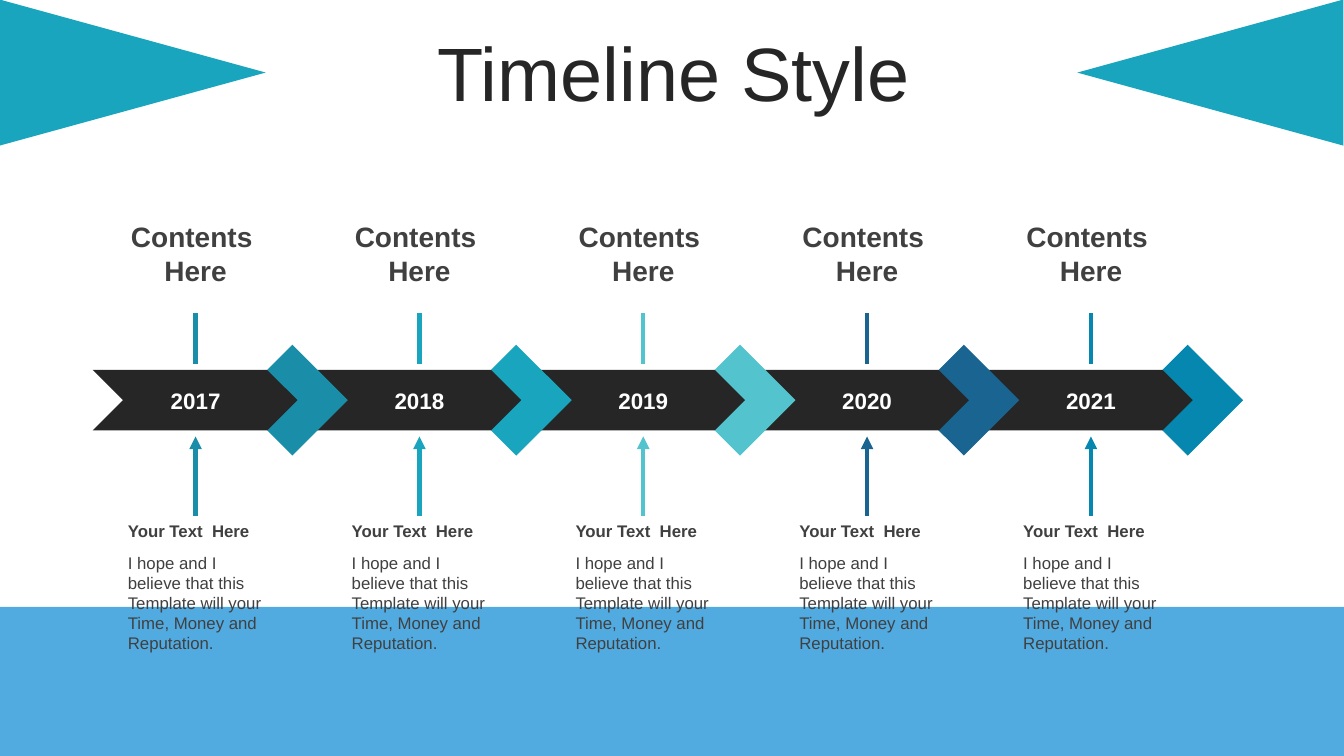
from dataclasses import dataclass

import lxml.etree
import pptx
import pptx.dml.color
import pptx.enum.dml
import pptx.enum.shapes
import pptx.enum.text
import pptx.oxml.ns
import pptx.util

Inches = pptx.util.Inches
Shape = pptx.enum.shapes.MSO_SHAPE
Align = pptx.enum.text.PP_ALIGN
Anchor = pptx.enum.text.MSO_ANCHOR

COLORS = {
    "band": "51ABE1",
    "wedge": "19A5BE",
    "dark": "262626",
    "text": "404040",
    "white": "FFFFFF",
}
FONT = "Arial"
FIRST = 1.94  # centre of the first step
STEP = 2.22
HEAD = "Your Text  Here"
BODY = "I hope and I believe that this Template will your Time, Money and Reputation."


@dataclass
class Stage:
    year: str
    color: str


@dataclass
class Style:
    size: int
    color: str
    bold: bool = False
    align: Align = Align.CENTER


STAGES = [
    Stage("2017", "1A8EA9"),
    Stage("2018", "19A5BE"),
    Stage("2019", "53C3CD"),
    Stage("2020", "196491"),
    Stage("2021", "0587AF"),
]
TITLE = Style(54, COLORS["dark"])
TOPIC = Style(20, COLORS["text"], True)
YEAR = Style(16, COLORS["white"], True)
LABEL = Style(12, COLORS["text"], True, Align.LEFT)
DETAIL = Style(12, COLORS["text"], False, Align.LEFT)


def rgb(color: str) -> pptx.dml.color.RGBColor:
    return pptx.dml.color.RGBColor.from_string(color)


def write(shape, lines: list[str], style: Style) -> None:
    """Fill a shape's text frame, one paragraph per line."""
    frame = shape.text_frame
    frame.word_wrap = True
    frame.text = "\n".join(lines)
    for para in frame.paragraphs:
        para.alignment = style.align
        para.font.name = FONT
        para.font.size = pptx.util.Pt(style.size)
        para.font.bold = style.bold
        para.font.color.rgb = rgb(style.color)


def add_block(slide, kind: Shape, left: float, top: float,
              width: float, height: float, color: str):
    shape = slide.shapes.add_shape(
        kind, Inches(left), Inches(top), Inches(width), Inches(height))
    shape.shadow.inherit = False
    shape.fill.solid()
    shape.fill.fore_color.rgb = rgb(color)
    shape.line.fill.background()
    return shape


def add_text(slide, mid: float, top: float, width: float, height: float,
             lines: list[str], style: Style) -> None:
    """Add a text box centred on mid."""
    box = slide.shapes.add_textbox(
        Inches(mid - width / 2), Inches(top), Inches(width), Inches(height))
    write(box, lines, style)


def add_line(slide, mid: float, start: float, end: float, color: str):
    line = slide.shapes.add_connector(
        pptx.enum.shapes.MSO_CONNECTOR.STRAIGHT,
        Inches(mid), Inches(start), Inches(mid), Inches(end))
    line.line.width = pptx.util.Pt(3)
    line.line.color.rgb = rgb(color)
    lxml.etree.SubElement(line._element.spPr, pptx.oxml.ns.qn("a:effectLst"))
    return line


def add_stage(slide, stage: Stage, mid: float) -> None:
    # Diamond behind its dark chevron
    add_block(slide, Shape.DIAMOND, mid + 0.41, 3.42, 1.1, 1.1, stage.color)
    add_block(slide, Shape.CHEVRON, mid - 1.02, 3.67, 2.03, 0.6, COLORS["dark"])
    add_text(slide, mid, 3.79, 0.73, 0.37, [stage.year], YEAR)

    # Topic above the bar
    add_text(slide, mid, 2.13, 1.79, 0.77, ["Contents ", "Here"], TOPIC)
    add_line(slide, mid, 3.11, 3.61, stage.color)

    # Label and detail below the bar
    label = add_block(slide, Shape.RECTANGLE, mid - 0.77, 5.12, 1.54, 0.3,
                      COLORS["white"])
    write(label, [HEAD], LABEL)
    add_text(slide, mid, 5.43, 1.54, 1.11, [BODY], DETAIL)

    # Arrow from the label up to the bar
    arrow = add_line(slide, mid, 5.12, 4.33, stage.color)
    arrow.begin_connect(label, 0)
    lxml.etree.SubElement(arrow.line._get_or_add_ln(),
                          pptx.oxml.ns.qn("a:tailEnd"), type="triangle")


def main() -> None:
    deck = pptx.Presentation()
    deck.slide_width = Inches(13.33)
    deck.slide_height = Inches(7.5)
    slide = deck.slides.add_slide(deck.slide_layouts[5])

    # Bottom band
    add_block(slide, Shape.RECTANGLE, 0, 6.02, 13.33, 1.48, COLORS["band"])

    # Title
    title = slide.shapes.title
    title.left, title.top = Inches(0.35), Inches(0.37)
    title.width, title.height = Inches(12.66), Inches(0.79)
    write(title, ["Timeline Style"], TITLE)
    title.text_frame.auto_size = pptx.enum.text.MSO_AUTO_SIZE.NONE
    title.text_frame.vertical_anchor = Anchor.MIDDLE
    title.text_frame.paragraphs[0].line_spacing = 0.9
    title.text_frame.paragraphs[0].space_before = pptx.util.Pt(10)

    # Stages from right to left, so each diamond covers the next chevron
    for index, stage in reversed(list(enumerate(STAGES))):
        add_stage(slide, stage, FIRST + index * STEP)

    # Corner wedges pointing at the title
    for left, turn in ((0.59, 90), (11.28, 270)):
        wedge = add_block(slide, Shape.ISOSCELES_TRIANGLE, left, -0.6,
                          1.45, 2.64, COLORS["wedge"])
        wedge.rotation = turn

    deck.save("out.pptx")


if __name__ == "__main__":
    main()
